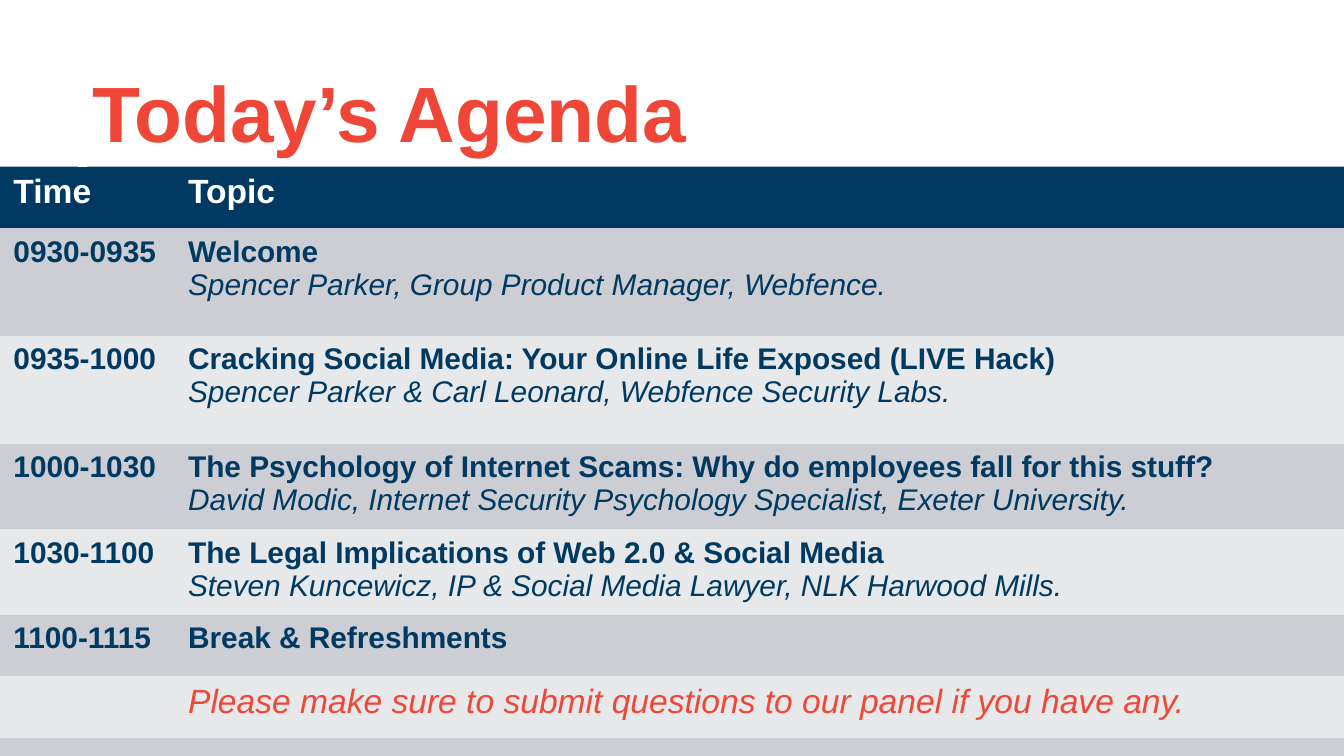
from copy import deepcopy
from dataclasses import dataclass

from pptx import Presentation
from pptx import util as u
from pptx.dml.color import RGBColor
from pptx.enum import shapes, text
from pptx.oxml.ns import qn


@dataclass(frozen=True)
class Theme:
    face: str = "Arial"
    navy: str = "003A62"
    coral: str = "EF4638"
    note: str = "EF4838"
    white: str = "FFFFFF"
    bands: tuple = ("CCCED3", "E7E8EA")
    title: int = 42
    head: int = 18
    body: int = 16


theme = Theme()
PLAIN = "{2D5ABB26-0587-4C30-8999-92F81FD0307C}"  # no style, no grid


def paint(fill, tone):
    fill.solid()
    fill.fore_color.rgb = RGBColor.from_string(tone)


def write(para, words, size, tone, **form):
    run = para.add_run()
    run.text = words
    form = {"name": theme.face, "size": u.Pt(size), **form}
    for key, val in form.items():
        setattr(run.font, key, val)
    run.font.color.rgb = RGBColor.from_string(tone)


deck = Presentation()
deck.slide_width = u.Inches(10)
deck.slide_height = u.Inches(10) * 9 // 16
slide = deck.slides.add_slide(deck.slide_layouts[6])
top = u.Inches(1.24)

# Rule under the title, in two parts
for left, width in ((0, 0.58), (0.65, 9.35)):
    bar = slide.shapes.add_shape(shapes.MSO_SHAPE.RECTANGLE, u.Inches(left), top,
                                 u.Inches(width), u.Inches(0.08))
    bar.shadow.inherit = False
    paint(bar.fill, theme.navy)
    bar.line.fill.background()

# Title
box = slide.shapes.add_textbox(u.Inches(0.59), u.Inches(0.13), u.Inches(8.98), u.Inches(1.1))
frame = box.text_frame
frame.word_wrap = True
frame.vertical_anchor = text.MSO_ANCHOR.BOTTOM
write(frame.paragraphs[0], "Today’s Agenda", theme.title, theme.coral, bold=True)

# Agenda: row height, time, topic, speaker
agenda = [
    (0.46, "Time", "Topic", ""),
    (0.8, "0930-0935", "Welcome",
     "Spencer Parker, Group Product Manager, Webfence."),
    (0.8, "0935-1000", "Cracking Social Media: Your Online Life Exposed (LIVE Hack)",
     "Spencer Parker & Carl Leonard, Webfence Security Labs."),
    (0.64, "1000-1030",
     "The Psychology of Internet Scams: Why do employees fall for this stuff?",
     "David Modic, Internet Security Psychology Specialist, Exeter University."),
    (0.46, "1030-1100", "The Legal Implications of Web 2.0 & Social Media",
     "Steven Kuncewicz, IP & Social Media Lawyer, NLK Harwood Mills."),
    (0.46, "1100-1115", "Break & Refreshments", ""),
    (0.46, "", "", ""),
    (0.46, "", "", ""),
]
grid = slide.shapes.add_table(len(agenda), 2, 0, top, u.Inches(10), u.Inches(4.73)).table
grid.horz_banding = False
grid._tbl.tblPr.find(qn("a:tableStyleId")).text = PLAIN
for col, width in zip(grid.columns, (1.3, 8.7)):
    col.width = u.Inches(width)

for i, (height, time, topic, who) in enumerate(agenda):
    grid.rows[i].height = u.Inches(height)
    size, tone, back = theme.body, theme.navy, theme.bands[(i - 1) % 2]
    if i == 0:
        size, tone, back = theme.head, theme.white, theme.navy
    for cell, words in zip(grid.rows[i].cells, (time, topic)):
        paint(cell.fill, back)
        if words:
            write(cell.text_frame.paragraphs[0], words, size, tone, bold=True)
    if who:
        para = grid.cell(i, 1).text_frame.paragraphs[0]
        para.add_line_break()
        # The break takes the topic's type size, so the line stays tight
        para._p.find(qn("a:br")).append(deepcopy(para.runs[0]._r.rPr))
        write(para, who, size, tone, bold=False, italic=True)

write(grid.cell(6, 1).text_frame.paragraphs[0],
      "Please make sure to submit questions to our panel if you have any.",
      theme.head, theme.note, bold=False, italic=True)

deck.save("out.pptx")
